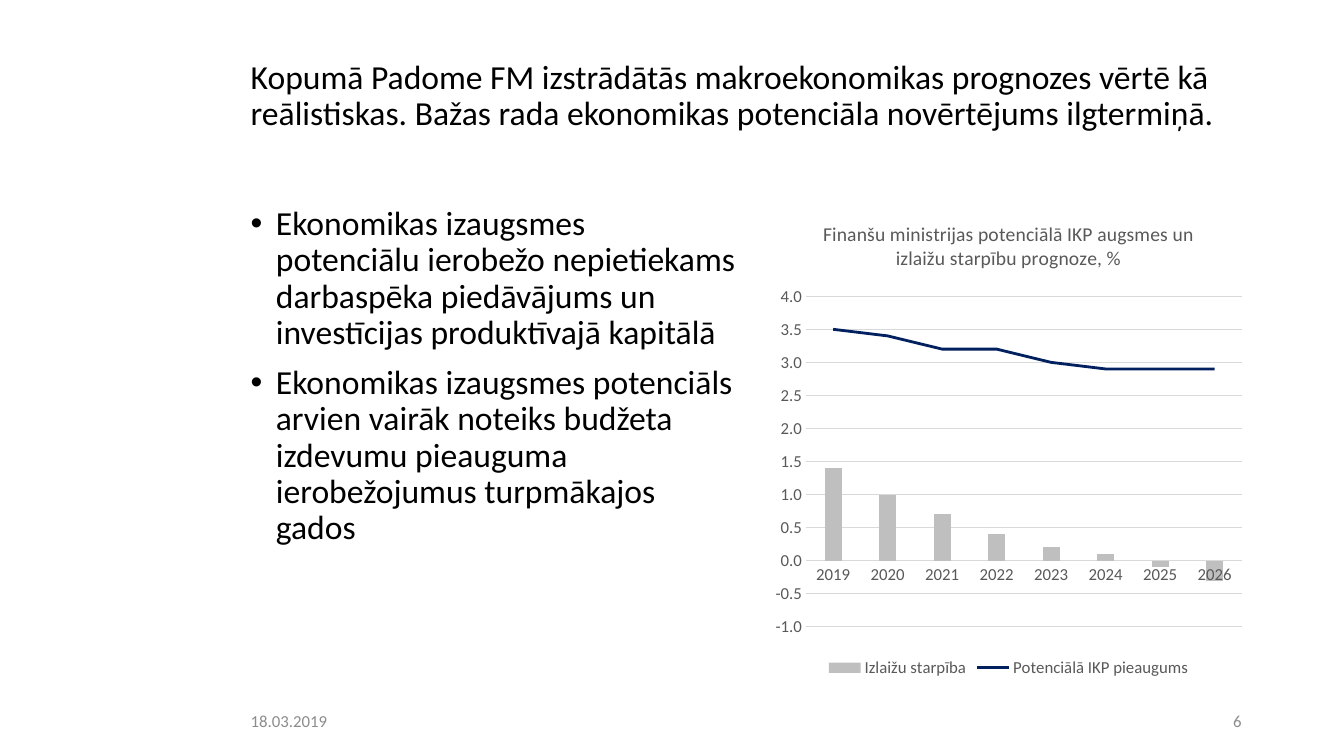
from dataclasses import dataclass

from lxml import etree
from pptx import Presentation
from pptx.chart.data import CategoryChartData
from pptx.dml.color import RGBColor
from pptx.enum.chart import XL_CHART_TYPE as CT, XL_LEGEND_POSITION as LP
from pptx.enum.chart import XL_MARKER_STYLE as MS, XL_TICK_MARK as TM
from pptx.enum.text import MSO_ANCHOR as MA, PP_ALIGN as AL
from pptx.oxml import parse_xml
from pptx.oxml.ns import nsdecls, qn
from pptx.util import Pt


@dataclass(frozen=True)
class Theme:
    font: str = "Calibri"
    text: str = "000000"
    footer: str = "8C8C8C"
    label: str = "595959"
    grid: str = "D9D9D9"
    gap_bar: str = "BFBFBF"
    growth_line: str = "002060"
    main_size: int = 24
    chart_title_size: int = 14
    small_size: int = 12


T = Theme()
TITLE = (
    "Kopumā Padome FM izstrādātās makroekonomikas prognozes vērtē kā "
    "reālistiskas. Bažas rada ekonomikas potenciāla novērtējums ilgtermiņā."
)
BULLETS = [
    "Ekonomikas izaugsmes potenciālu ierobežo nepietiekams darbaspēka "
    "piedāvājums un investīcijas produktīvajā kapitālā",
    "Ekonomikas izaugsmes potenciāls arvien vairāk noteiks budžeta izdevumu "
    "pieauguma ierobežojumus turpmākajos gados",
]
CHART_TITLE = (
    "Finanšu ministrijas potenciālā IKP augsmes un izlaižu starpību prognoze, %"
)
YEARS = [str(year) for year in range(2019, 2027)]
OUTPUT_GAP = [1.4, 1, 0.7, 0.4, 0.2, 0.1, -0.1, -0.3]
POTENTIAL_GROWTH = [3.5, 3.4, 3.2, 3.2, 3, 2.9, 2.9, 2.9]


def style_font(font, size, color):
    font.name = T.font
    font.size = Pt(size)
    font.bold = False
    font.color.rgb = RGBColor.from_string(color)


def style_line(line, color, width):
    line.color.rgb = RGBColor.from_string(color)
    line.width = Pt(width)


def add_text_frame(s, box, anchor):
    tf = s.shapes.add_textbox(*map(Pt, box)).text_frame
    tf.word_wrap = True
    tf.vertical_anchor = anchor
    return tf


def add_run(p, text, size, color):
    r = p.add_run()
    r.text = text
    style_font(r.font, size, color)


def add_title(s, box):
    p = add_text_frame(s, box, MA.MIDDLE).paragraphs[0]
    p.line_spacing = 0.9
    add_run(p, TITLE, T.main_size, T.text)


def add_bullets(s, box):
    tf = add_text_frame(s, box, MA.TOP)
    for i, text in enumerate(BULLETS):
        p = tf.add_paragraph() if i else tf.paragraphs[0]
        p.line_spacing = 0.9
        p.space_before = Pt(10 if i else 0)
        pPr = p._p.get_or_add_pPr()
        pPr.set("marL", str(Pt(18)))
        pPr.set("indent", str(-Pt(18)))
        etree.SubElement(pPr, qn("a:buFont")).set("typeface", "Arial")
        etree.SubElement(pPr, qn("a:buChar")).set("char", "•")
        add_run(p, text, T.main_size, T.text)


def add_footer(s, box):
    x, y, w, h = box
    date_w, number_w = 118, 57
    parts = [
        ("18.03.2019", x, date_w, AL.LEFT),
        ("6", x + w - number_w, number_w, AL.RIGHT),
    ]
    for text, left, width, align in parts:
        p = add_text_frame(s, (left, y, width, h), MA.MIDDLE).paragraphs[0]
        p.alignment = align
        add_run(p, text, T.small_size, T.footer)


def move_last_series_to_line(chart):
    bars = chart.plots[0]._element
    ser = bars.findall(qn("c:ser"))[-1]
    for invert in ser.findall(qn("c:invertIfNegative")):
        ser.remove(invert)
    lines = parse_xml(
        f'<c:lineChart {nsdecls("c")}><c:grouping val="standard"/>'
        '<c:varyColors val="0"/></c:lineChart>'
    )
    lines.append(ser)
    etree.SubElement(lines, qn("c:marker")).set("val", "1")
    for axis in bars.findall(qn("c:axId")):
        etree.SubElement(lines, qn("c:axId")).set("val", axis.get("val"))
    bars.addnext(lines)


def add_forecast_chart(s, box):
    data = CategoryChartData(number_format="0.0")
    data.categories = YEARS
    data.add_series("Izlaižu starpība", OUTPUT_GAP)
    data.add_series("Potenciālā IKP pieaugums", POTENTIAL_GROWTH)
    chart = s.shapes.add_chart(CT.COLUMN_CLUSTERED, *map(Pt, box), data).chart
    style_font(chart.font, T.small_size, T.label)
    move_last_series_to_line(chart)

    bars, lines = chart.plots
    bars.vary_by_categories = False
    bars.gap_width = 219
    bars.overlap = -27
    gap = bars.series[0]
    gap.invert_if_negative = False
    gap.format.fill.solid()
    gap.format.fill.fore_color.rgb = RGBColor.from_string(T.gap_bar)
    growth = lines.series[0]
    growth.smooth = False
    growth.marker.style = MS.NONE
    style_line(growth.format.line, T.growth_line, 2)

    chart.has_title = True
    add_run(chart.chart_title.text_frame.paragraphs[0], CHART_TITLE,
            T.chart_title_size, T.label)
    chart.chart_title.include_in_layout = False
    chart.has_legend = True
    chart.legend.position = LP.BOTTOM
    chart.legend.include_in_layout = False
    style_font(chart.legend.font, T.small_size, T.label)

    years, percent = chart.category_axis, chart.value_axis
    for axis in (years, percent):
        axis.major_tick_mark = axis.minor_tick_mark = TM.NONE
        style_font(axis.tick_labels.font, T.small_size, T.label)
    style_line(years.format.line, T.grid, 0.75)
    percent.format.line.fill.background()
    style_line(percent.major_gridlines.format.line, T.grid, 0.75)
    percent.minimum_scale, percent.maximum_scale = -1, 4
    percent.major_unit = 0.5
    percent.tick_labels.number_format = "#,##0.0"
    percent.tick_labels.number_format_is_linked = False


def main():
    prs = Presentation()
    prs.slide_width, prs.slide_height = Pt(960), Pt(540)
    s = prs.slides.add_slide(prs.slide_layouts[6])
    left, width, top, height = 172, 722, 144, 343
    chart_w = 347
    add_title(s, (left, 29, width, 80))
    add_bullets(s, (left, top, 361.5, height))
    add_forecast_chart(s, (left + width - chart_w, top, chart_w, height))
    add_footer(s, (left, 500.5, width, 29))
    prs.save("out.pptx")


if __name__ == "__main__":
    main()
